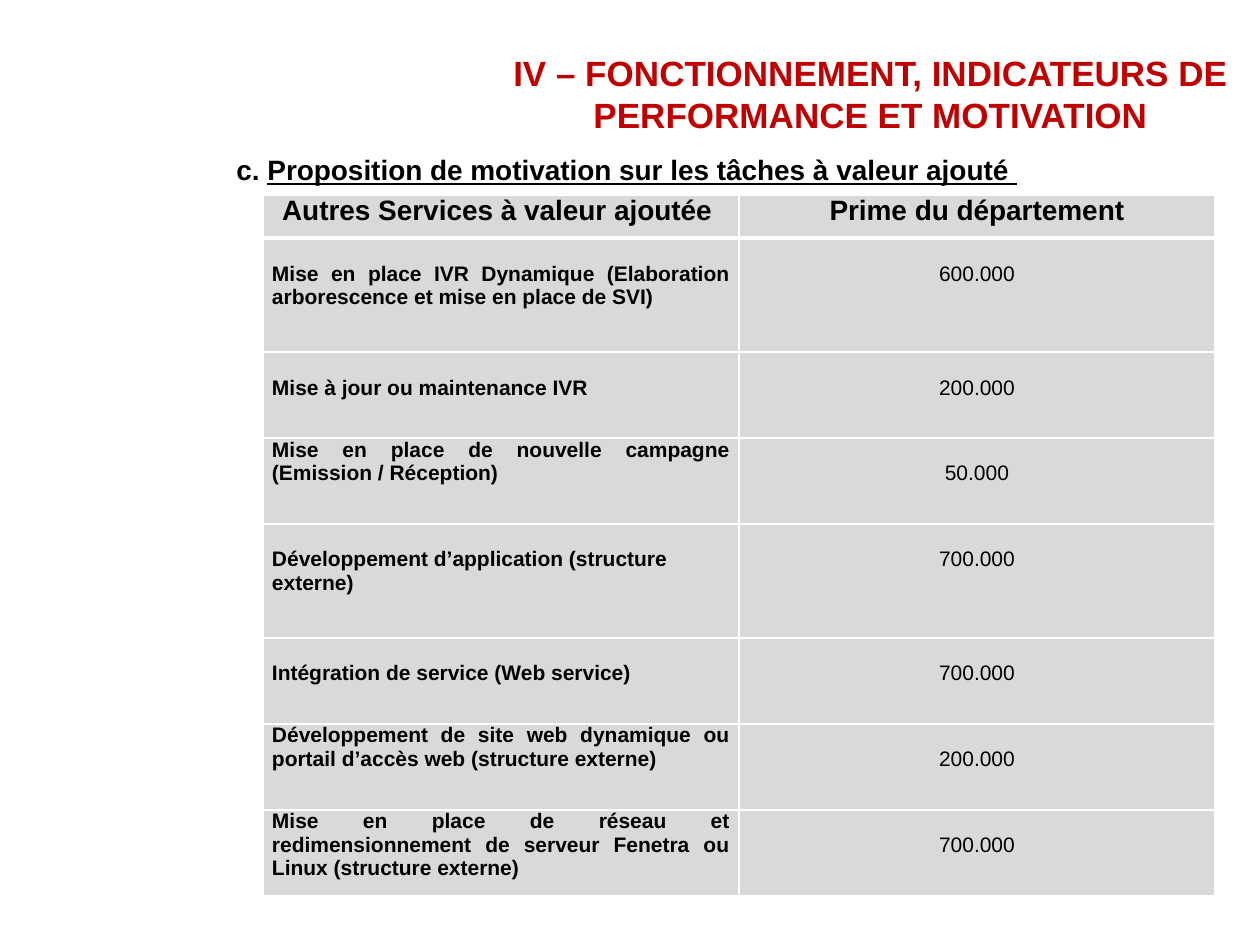
from dataclasses import dataclass

from pptx import Presentation
from pptx.dml.color import RGBColor
from pptx.enum.text import MSO_ANCHOR as Anchor, MSO_AUTO_SIZE as AutoSize, PP_ALIGN as Align
from pptx.oxml import parse_xml
from pptx.oxml.ns import nsdecls
from pptx.util import Emu, Pt

PX_PER_INCH = 126


@dataclass(frozen=True)
class Theme:
    font: str = "Arial"
    title: str = "C00000"
    text: str = "000000"
    cell: str = "D9D9D9"
    border: str = "FFFFFF"
    title_size: int = 20
    heading_size: int = 16
    body_size: int = 12


@dataclass(frozen=True)
class Service:
    label: str
    bonus: str
    height: int = 86
    align: Align = Align.JUSTIFY
    spaced: bool = True


THEME = Theme()
LINE = 24  # height of one line of body text
TALL = 114
HEADER_HEIGHT = 43
SERVICES = [
    Service("Mise en place IVR Dynamique (Elaboration arborescence et mise en place de SVI)",
            "600.000", height=TALL),
    Service("Mise à jour ou maintenance IVR", "200.000"),
    Service("Mise en place de nouvelle campagne (Emission / Réception)", "50.000", spaced=False),
    Service("Développement d’application (structure externe)", "700.000",
            height=TALL, align=Align.LEFT),
    Service("Intégration de service (Web service)", "700.000", align=Align.LEFT),
    Service("Développement de site web dynamique ou portail d’accès web (structure externe)",
            "200.000", spaced=False),
    Service("Mise en place de réseau et redimensionnement de serveur Fenetra ou Linux "
            "(structure externe)", "700.000", spaced=False),
]


def px(length: int) -> Emu:
    return Emu(round(length * 914400 / PX_PER_INCH))


def place(shape, left: int, top: int, width: int, height: int) -> None:
    shape.left, shape.top, shape.width, shape.height = map(px, (left, top, width, height))


def add_text(paragraph, text: str, *, size: int, color: str = THEME.text, bold: bool = True,
             underline: bool = False, align: Align = Align.CENTER) -> None:
    paragraph.alignment = align
    run = paragraph.add_run()
    run.text = text
    font = run.font
    font.name, font.size, font.bold = THEME.font, Pt(size), bold
    font.underline = underline
    font.color.rgb = RGBColor.from_string(color)


def set_borders(cell, top: int = 1, bottom: int = 1) -> None:
    """Draw the four cell edges, with widths in points."""
    properties = cell._tc.get_or_add_tcPr()
    for edge, width in {"L": 1, "R": 1, "T": top, "B": bottom}.items():
        properties.append(parse_xml(
            f'<a:ln{edge} {nsdecls("a")} w="{Pt(width)}"><a:solidFill>'
            f'<a:srgbClr val="{THEME.border}"/></a:solidFill></a:ln{edge}>'))


def fill_cell(cell, text: str, *, lead: int = 0, top: int = 1, bottom: int = 1, **text_format) -> None:
    """Write a cell whose text starts `lead` px below its top edge."""
    cell.margin_left = cell.margin_right = px(9)
    cell.margin_top, cell.margin_bottom = px(lead), 0
    cell.vertical_anchor = Anchor.TOP
    set_borders(cell, top, bottom)
    cell.fill.solid()
    cell.fill.fore_color.rgb = RGBColor.from_string(THEME.cell)
    add_text(cell.text_frame.paragraphs[0], text, **text_format)


def add_title(slide) -> None:
    title = slide.shapes.title
    place(title, 481, 43, 779, 100)
    frame = title.text_frame
    frame.word_wrap, frame.auto_size = True, AutoSize.NONE
    frame.vertical_anchor = Anchor.MIDDLE
    add_text(frame.paragraphs[0], "IV – FONCTIONNEMENT, INDICATEURS DE PERFORMANCE ET MOTIVATION",
             size=THEME.title_size, color=THEME.title)


def add_subtitle(slide) -> None:
    subtitle = slide.shapes.add_textbox(0, 0, 0, 0)
    place(subtitle, 224, 145, 973, 735)
    frame = subtitle.text_frame
    frame.word_wrap = True
    frame.vertical_anchor = Anchor.TOP
    frame.margin_top = px(8)
    paragraph = frame.paragraphs[0]
    add_text(paragraph, "c. ", size=THEME.heading_size, align=Align.JUSTIFY)
    add_text(paragraph, "Proposition de motivation sur les tâches à valeur ajouté ",
             size=THEME.heading_size, underline=True, align=Align.JUSTIFY)


def add_bonus_table(slide) -> None:
    heights = [HEADER_HEIGHT, *(service.height for service in SERVICES)]
    table = slide.shapes.add_table(len(heights), 2, px(263), px(195), px(952),
                                   px(sum(heights))).table
    for row, height in zip(table.rows, heights):
        row.height = px(height)
    for column, heading in enumerate(("Autres Services à valeur ajoutée ", "Prime du département")):
        fill_cell(table.cell(0, column), heading, bottom=3, size=THEME.heading_size)
    for row, service in enumerate(SERVICES, start=1):
        top = 3 if row == 1 else 1
        fill_cell(table.cell(row, 0), service.label, lead=LINE if service.spaced else 0,
                  top=top, size=THEME.body_size, align=service.align)
        fill_cell(table.cell(row, 1), service.bonus, lead=LINE, top=top,
                  size=THEME.body_size, bold=False)


def main() -> None:
    presentation = Presentation()
    presentation.slide_width, presentation.slide_height = px(1260), px(945)
    slide = presentation.slides.add_slide(presentation.slide_layouts.get_by_name("Title Only"))
    add_title(slide)
    add_subtitle(slide)
    add_bonus_table(slide)
    presentation.save("out.pptx")


if __name__ == "__main__":
    main()
